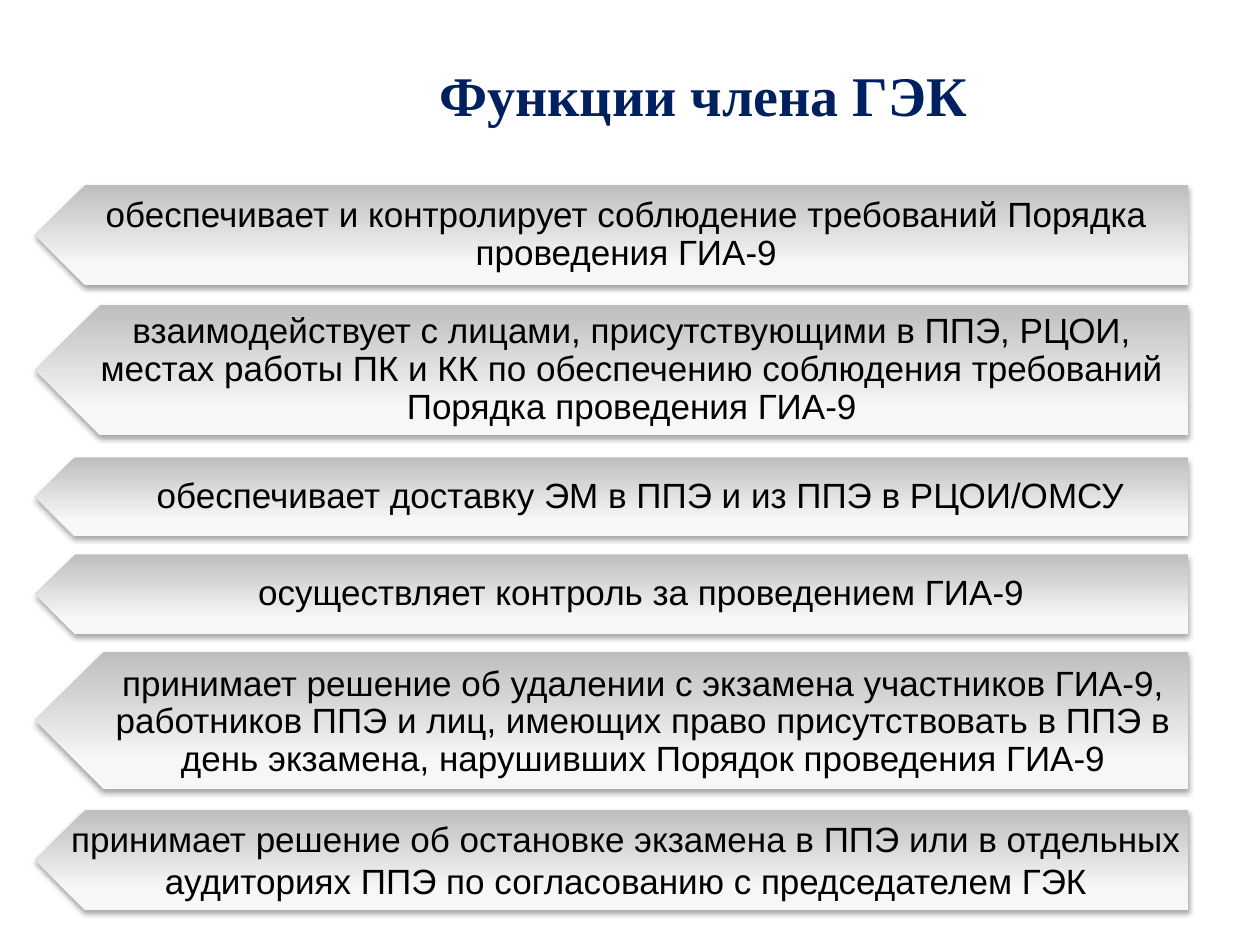
from lxml import etree
from pptx import Presentation
from pptx.dml.color import RGBColor
from pptx.enum.shapes import MSO_SHAPE
from pptx.enum.text import MSO_ANCHOR, PP_ALIGN
from pptx.oxml.ns import qn
from pptx.util import Pt

ARROW = MSO_SHAPE.PENTAGON
TOP, MIDDLE = MSO_ANCHOR.TOP, MSO_ANCHOR.MIDDLE
CENTER = PP_ALIGN.CENTER
NAVY = RGBColor(0x00, 0x20, 0x60)
BLACK = RGBColor(0x00, 0x00, 0x00)
STOPS = [(0, RGBColor(0xBE, 0xBE, 0xBE)),
         (80, RGBColor(0xF7, 0xF7, 0xF7)),
         (100, RGBColor(0xF8, 0xF8, 0xF8))]

TITLE = "Функции члена ГЭК "
LEFT, WIDTH = 20.2, 658.8
INSET = (23, 3.6, 6.5, 3.6)
PLAIN = (7.2, 3.6, 7.2, 3.6)

# text, (arrow top, height), (text left, top, width, height), insets, anchor, spacing
ROWS = [
    ("обеспечивает и контролирует соблюдение требований Порядка проведения ГИА-9",
     (105.8, 57), (20.2, 105.8, 658.8, 57), INSET, MIDDLE, 0.9),
    ("взаимодействует с лицами, присутствующими в ППЭ, РЦОИ, местах работы ПК и КК "
     "по обеспечению соблюдения требований Порядка проведения ГИА-9",
     (174.2, 74.6), (28.1, 174.2, 649.4, 74.6), INSET, MIDDLE, 0.9),
    ("обеспечивает доставку ЭМ в ППЭ и из ППЭ в РЦОИ/ОМСУ",
     (261.4, 45), (37.4, 261.4, 640.8, 45), INSET, MIDDLE, 0.9),
    ("осуществляет контроль за проведением ГИА-9",
     (316.8, 45.4), (37.4, 316.8, 641.5, 45.4), INSET, MIDDLE, 0.9),
    ("принимает решение об удалении с экзамена участников ГИА-9, работников ППЭ и лиц, "
     "имеющих право присутствовать в ППЭ в день экзамена, нарушивших Порядок "
     "проведения ГИА-9",
     (372.4, 78.4), (34.6, 375.1, 649.4, 75.6), INSET, MIDDLE, 0.9),
    ("принимает решение об остановке экзамена в ППЭ или в отдельных аудиториях ППЭ "
     "по согласованию с председателем ГЭК",
     (463, 56.8), (23, 463.7, 669.6, 55.4), PLAIN, TOP, 1.0),
]


def node(parent, tag, **attrs):
    return etree.SubElement(parent, qn("a:" + tag), {k: str(v) for k, v in attrs.items()})


def add_arrow(slide, top, height):
    arrow = slide.shapes.add_shape(ARROW, Pt(LEFT), Pt(top), Pt(WIDTH), Pt(height))
    arrow.rotation = 180
    arrow.line.fill.background()
    arrow.shadow.inherit = False
    props = arrow.element.spPr
    grad = etree.Element(qn("a:gradFill"), rotWithShape="1")
    stops = node(grad, "gsLst")
    for pos, color in STOPS:
        node(node(stops, "gs", pos=pos * 1000), "srgbClr", val=color)
    node(grad, "lin", ang=270 * 60000, scaled=0)
    props.find(qn("a:prstGeom")).addnext(grad)
    shadow = node(props.find(qn("a:effectLst")), "outerShdw", blurRad=Pt(3.1),
                  dist=Pt(1.8), dir=90 * 60000, rotWithShape=0)
    node(node(shadow, "srgbClr", val=BLACK), "alpha", val=35000)


def add_text(slide, text, box, insets, anchor, spacing, face, size, color, bold=False):
    frame = slide.shapes.add_textbox(*map(Pt, box)).text_frame
    frame.word_wrap = True
    frame.vertical_anchor = anchor
    (frame.margin_left, frame.margin_top,
     frame.margin_right, frame.margin_bottom) = map(Pt, insets)
    para = frame.paragraphs[0]
    para.text = text
    para.alignment = CENTER
    para.line_spacing = spacing
    font = para.font
    font.name, font.size, font.bold = face, Pt(size), bold
    font.color.rgb = color


def main():
    deck = Presentation()
    deck.slide_width, deck.slide_height = Pt(720), Pt(540)
    slide = deck.slides.add_slide(deck.slide_layouts[6])
    add_text(slide, TITLE, (82, 31, 648, 46), PLAIN, MIDDLE, 1.0,
             "Times New Roman", 32, NAVY, True)
    for text, span, box, insets, anchor, spacing in ROWS:
        add_arrow(slide, *span)
        add_text(slide, text, box, insets, anchor, spacing, "Arial", 20, BLACK)
    deck.save("out.pptx")


if __name__ == "__main__":
    main()
